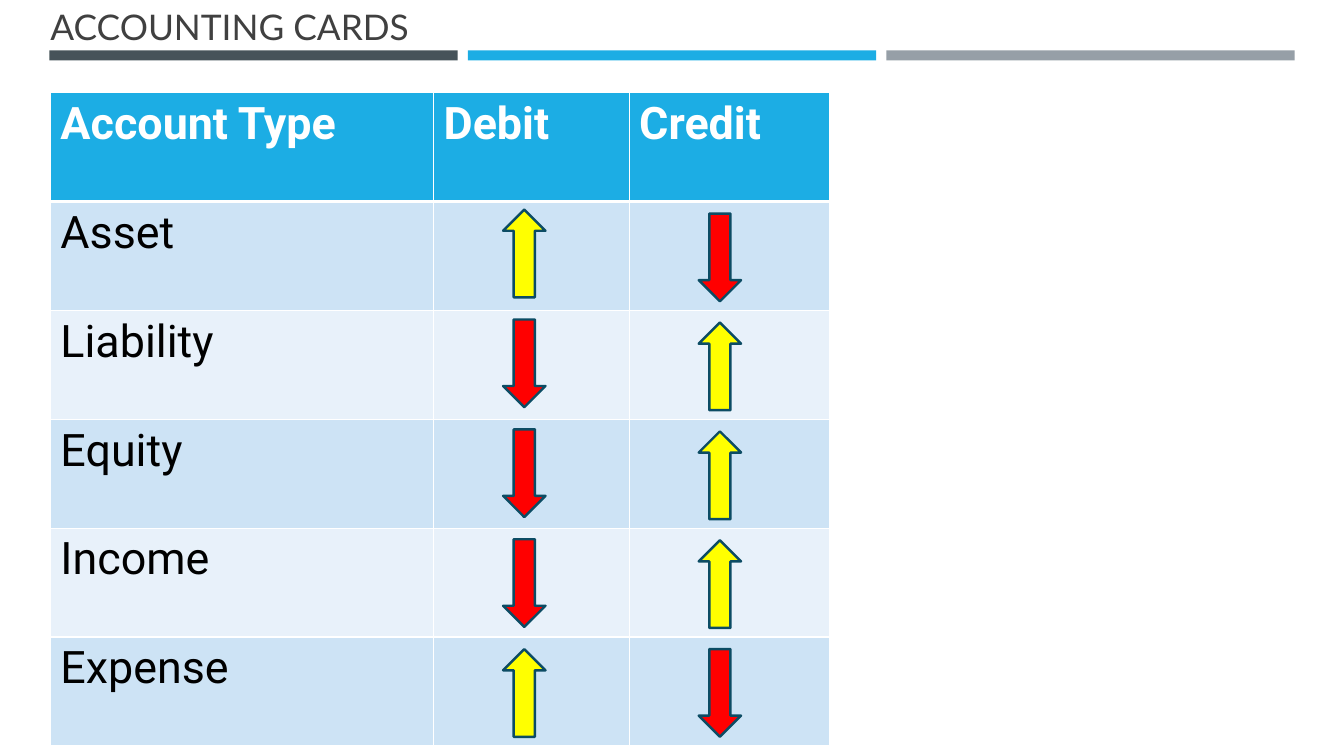
from lxml import etree
from pptx import Presentation
from pptx import util as u
from pptx.dml.color import RGBColor
from pptx.enum import shapes, text
from pptx.oxml import ns

# Content: account type, debit effect, credit effect
TITLE = "ACCOUNTING CARDS"
HEAD = ["Account Type", "Debit", "Credit"]
ROWS = [
    ("Asset", "up", "down"),
    ("Liability", "down", "up"),
    ("Equity", "down", "up"),
    ("Income", "down", "up"),
    ("Expense", "up", "down"),
]

# Colours
SLATE = RGBColor(0x46, 0x53, 0x59)
BLUE = RGBColor(0x1C, 0xAD, 0xE4)
GREY = RGBColor(0x96, 0x9F, 0xA7)
INK = RGBColor(0x40, 0x40, 0x40)
WHITE = RGBColor(0xFF, 0xFF, 0xFF)
BLACK = RGBColor(0, 0, 0)
BANDS = [RGBColor(0xCD, 0xE3, 0xF5), RGBColor(0xE8, 0xF1, 0xFA)]
EDGE = RGBColor(0x0C, 0x4C, 0x64)
ARROWS = {
    "up": (shapes.MSO_SHAPE.UP_ARROW, RGBColor(0xFF, 0xFF, 0)),
    "down": (shapes.MSO_SHAPE.DOWN_ARROW, RGBColor(0xFF, 0, 0)),
}

# Layout in inches
BAR_X, BAR_Y, BAR_W, BAR_H, BAR_STEP = 0.49, 0.5, 4.05, 0.1, 4.15
TAB_X, TAB_Y, ROW_H = 0.5, 0.92, 1.08
COLS = [3.8, 1.94, 1.99]
ARROW_W, ARROW_H = 0.42, 0.87
LANES = [(4.99, 2.08, 1.09), (6.93, 2.12, 1.08)]  # left, first top, step


def style(para, color, **extra):
    for key, val in extra.items():
        setattr(para.font, key, val)
    para.font.color.rgb = color


def add_box(slide, kind, place, fill, edge=None):
    shape = slide.shapes.add_shape(kind, *map(u.Inches, place))
    shape.shadow.inherit = False
    shape.fill.solid()
    shape.fill.fore_color.rgb = fill
    if edge is None:
        shape.line.fill.background()
    else:
        shape.line.color.rgb = edge
        shape.line.width = u.Pt(1.75)


def set_edges(cell, widths):
    props = cell._tc.get_or_add_tcPr()
    for side, width in widths.items():
        line = etree.SubElement(props, ns.qn("a:ln" + side), w=str(u.Pt(width)))
        fill = etree.SubElement(line, ns.qn("a:solidFill"))
        etree.SubElement(fill, ns.qn("a:srgbClr"), val=str(WHITE))


def add_title(slide):
    title = slide.shapes.title
    spot = {"left": 0.4, "top": -0.02, "width": 12.06, "height": 0.54}
    for key, val in spot.items():
        setattr(title, key, u.Inches(val))
    frame = title.text_frame
    frame.text = TITLE
    frame.auto_size = text.MSO_AUTO_SIZE.NONE
    frame.vertical_anchor = text.MSO_ANCHOR.BOTTOM
    para = frame.paragraphs[0]
    para.alignment = text.PP_ALIGN.LEFT
    style(para, INK, name="Lato", size=u.Pt(25.2))


def add_grid(slide):
    count = len(ROWS) + 1
    place = (TAB_X, TAB_Y, sum(COLS), ROW_H * count)
    table = slide.shapes.add_table(
        count, len(COLS), *map(u.Inches, place)).table
    for col, width in zip(table.columns, COLS):
        col.width = u.Inches(width)
    labels = [HEAD] + [(row[0], "", "") for row in ROWS]
    for r, line in enumerate(labels):
        table.rows[r].height = u.Inches(ROW_H)
        for c, label in enumerate(line):
            cell = table.cell(r, c)
            set_edges(cell, {"L": 1, "R": 1, "T": 3 if r == 1 else 1,
                             "B": 3 if r == 0 else 1})
            cell.fill.solid()
            cell.fill.fore_color.rgb = BANDS[(r - 1) % 2] if r else BLUE
            if label:
                cell.text = label
                style(cell.text_frame.paragraphs[0], BLACK if r else WHITE,
                      name="Roboto", size=u.Pt(32), bold=r == 0)


def main():
    deck = Presentation()
    deck.slide_width, deck.slide_height = u.Inches(13.33), u.Inches(7.5)
    slide = deck.slides.add_slide(deck.slide_layouts[5])

    # Bars under the title
    for i, color in enumerate([SLATE, BLUE, GREY]):
        add_box(slide, shapes.MSO_SHAPE.RECTANGLE,
                (BAR_X + i * BAR_STEP, BAR_Y, BAR_W, BAR_H), color)
    add_title(slide)
    add_grid(slide)

    # Arrows in the debit and credit columns
    for r, (_, *signs) in enumerate(ROWS):
        for sign, (left, top, step) in zip(signs, LANES):
            kind, color = ARROWS[sign]
            add_box(slide, kind, (left, top + r * step, ARROW_W, ARROW_H),
                    color, EDGE)
    deck.save("out.pptx")


if __name__ == "__main__":
    main()
